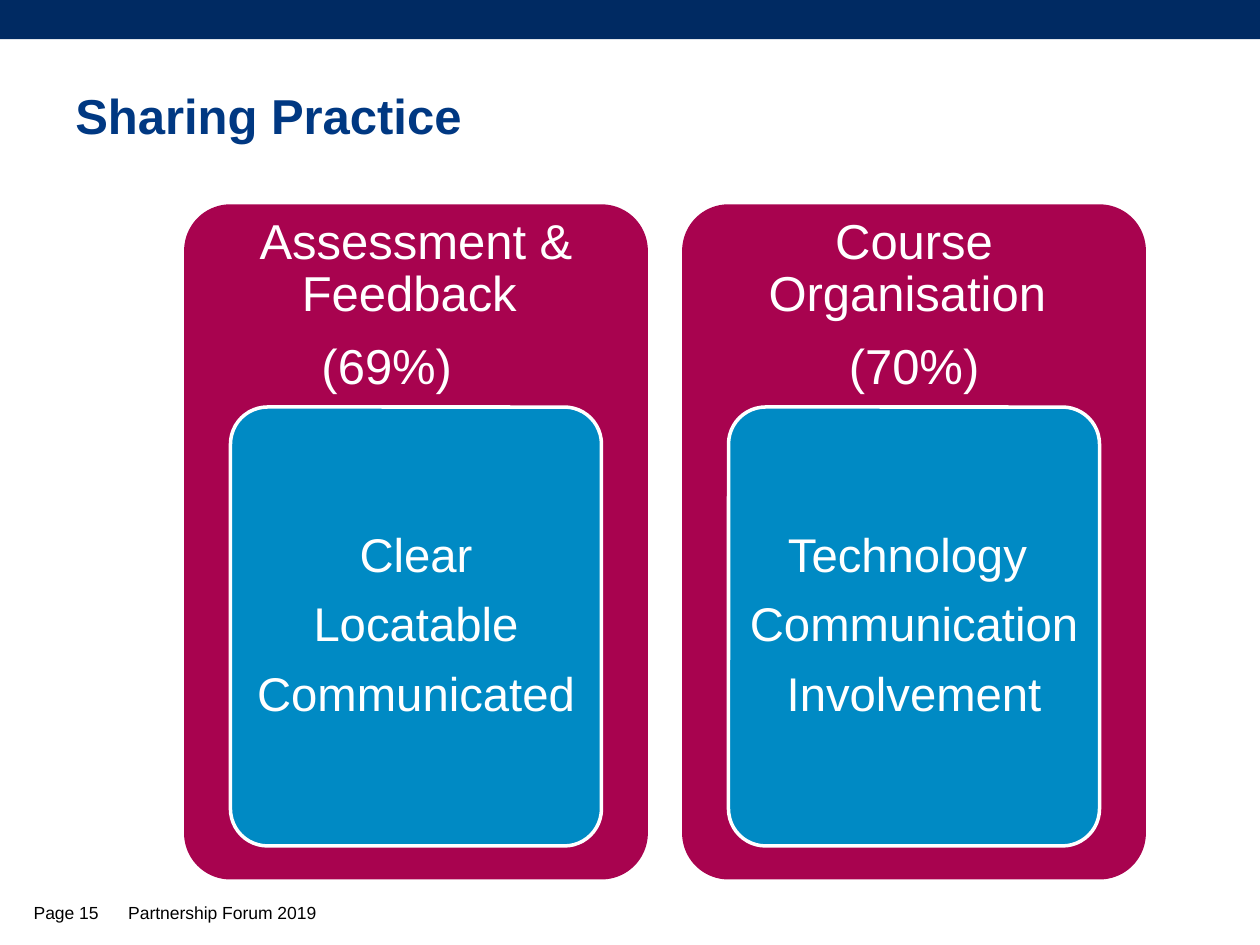
from pptx import Presentation
from pptx.dml.color import RGBColor
from pptx.enum.shapes import MSO_SHAPE as Shape
from pptx.enum.text import MSO_ANCHOR as Anchor, PP_ALIGN as Align
from pptx.util import Pt

NAVY = RGBColor(0x00, 0x2A, 0x62)
TITLE_BLUE = RGBColor(0x00, 0x38, 0x82)
CRIMSON = RGBColor(0xA8, 0x03, 0x4F)
CYAN = RGBColor(0x00, 0x8A, 0xC4)
WHITE = RGBColor(0xFF, 0xFF, 0xFF)
BLACK = RGBColor(0x00, 0x00, 0x00)

THEMES = [
    (["Assessment & Feedback ", "(69%)\t"],
     ["Clear", "Locatable", "Communicated"]),
    (["Course Organisation ", "(70%)"],
     ["Technology ", "Communication ", "Involvement"]),
]
CARD_LEFT, CARD_TOP, CARD_PITCH = 105.2, 116.8, 284.6
CARD_W, CARD_H, HEADING_H = 265, 385.8, 115.8


def add_block(s, kind, left, top, width, height, fill, line=None):
    sp = s.shapes.add_shape(kind, Pt(left), Pt(top), Pt(width), Pt(height))
    sp.shadow.inherit = False
    sp.fill.solid()
    sp.fill.fore_color.rgb = fill
    if line is None:
        sp.line.fill.background()
    else:
        sp.line.color.rgb = line
        sp.line.width = Pt(2)
    if kind == Shape.ROUNDED_RECTANGLE:
        sp.adjustments[0] = 0.1
    return sp


def add_text(s, box, lines, size, color, bold=False, anchor=Anchor.MIDDLE,
             align=Align.LEFT, inset=(7.2, 3.6), spacing=None, after=0):
    sp = s.shapes.add_textbox(*(Pt(v) for v in box))
    tf = sp.text_frame
    tf.word_wrap = True
    tf.vertical_anchor = anchor
    tf.margin_left = tf.margin_right = Pt(inset[0])
    tf.margin_top = tf.margin_bottom = Pt(inset[1])
    for i, line in enumerate(lines):
        p = tf.add_paragraph() if i else tf.paragraphs[0]
        p.alignment = align
        p.space_after = Pt(after)
        if spacing:
            p.line_spacing = spacing
        r = p.add_run()
        r.text = line
        r.font.name = "Arial"
        r.font.size = Pt(size)
        r.font.bold = bold
        r.font.color.rgb = color


def add_card(s, left, heading, points):
    # Outer card with its heading
    add_block(s, Shape.ROUNDED_RECTANGLE, left, CARD_TOP, CARD_W, CARD_H, CRIMSON)
    add_text(s, (left, CARD_TOP, CARD_W, HEADING_H), heading, 28, WHITE,
             align=Align.CENTER, inset=(8.4, 8.4), spacing=0.9, after=11)
    # Inner panel with its points
    inner_left, inner_top = left + CARD_W / 10, CARD_TOP + HEADING_H
    add_block(s, Shape.ROUNDED_RECTANGLE, inner_left, inner_top,
              CARD_W * 0.8, 250.8, CYAN, WHITE)
    add_text(s, (inner_left + 6.2, inner_top + 6.2, 199.6, 238.4), points, 27, WHITE,
             align=Align.CENTER, inset=(5.4, 4), spacing=0.9, after=10.6)


def main():
    prs = Presentation()
    prs.slide_width, prs.slide_height = Pt(720), Pt(540)
    s = prs.slides.add_slide(prs.slide_layouts[6])

    # Top band and title
    add_block(s, Shape.RECTANGLE, 0, 0, 720, 22.4, NAVY)
    add_text(s, (36, 43.2, 653, 45.4), ["Sharing Practice"], 28, TITLE_BLUE, bold=True)

    # Theme cards
    for i, (heading, points) in enumerate(THEMES):
        add_card(s, CARD_LEFT + i * CARD_PITCH, heading, points)

    # Footer
    add_text(s, (66.2, 512, 476.6, 21.6), ["Partnership Forum 2019"], 10, BLACK,
             anchor=Anchor.TOP)
    add_text(s, (12.2, 511.2, 53.3, 20.9), ["Page 15"], 10, BLACK)

    prs.save("out.pptx")


if __name__ == "__main__":
    main()
